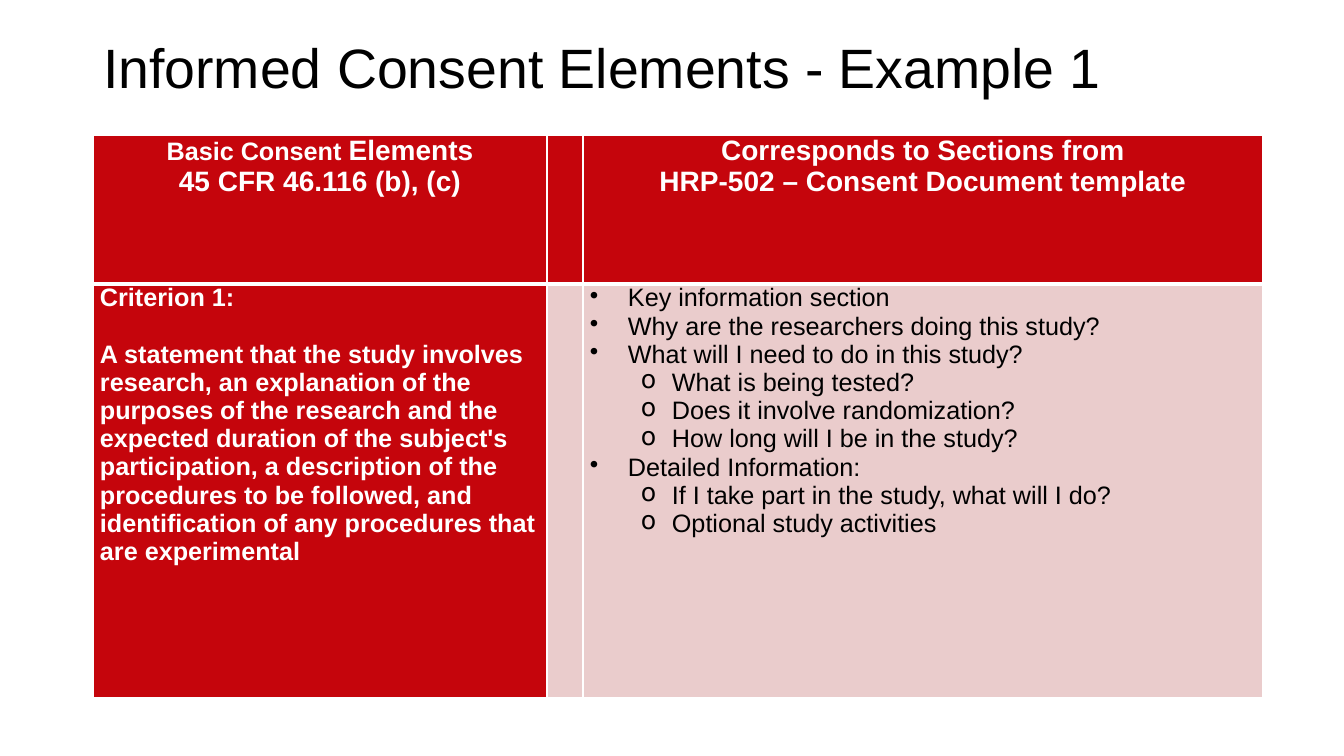
from lxml import etree
from pptx import Presentation
from pptx.dml.color import RGBColor
from pptx.enum.text import MSO_ANCHOR, MSO_AUTO_SIZE, PP_ALIGN
from pptx.oxml.ns import qn
from pptx.util import Pt

LEFT, CENTER = PP_ALIGN.LEFT, PP_ALIGN.CENTER
MIDDLE, TOP = MSO_ANCHOR.MIDDLE, MSO_ANCHOR.TOP
NO_AUTOFIT = MSO_AUTO_SIZE.NONE
RED = RGBColor(0xC5, 0x05, 0x0C)
PINK = RGBColor(0xEA, 0xCC, 0xCC)
WHITE = RGBColor(0xFF, 0xFF, 0xFF)
BLACK = RGBColor(0x00, 0x00, 0x00)
EMU_PER_PX = 914400 / 100.8


def px(length):
    return round(length * EMU_PER_PX)


def add_run(paragraph, text, size, color, bold):
    run = paragraph.add_run()
    run.text = text
    run.font.name = "Arial"
    run.font.size = Pt(size)
    run.font.color.rgb = color
    run.font.bold = bold


prs = Presentation()
prs.slide_width, prs.slide_height = px(1344), px(756)
slide = prs.slides.add_slide(prs.slide_layouts[5])

# Title
title = slide.shapes.title
title.left, title.top, title.width, title.height = px(93), px(35), px(1159), px(71)
title_frame = title.text_frame
title_frame.auto_size = NO_AUTOFIT
title_frame.vertical_anchor = MIDDLE
heading = title_frame.paragraphs[0]
heading.alignment = LEFT
heading.line_spacing = 0.9
add_run(heading, "Informed Consent Elements - Example 1", 39.6, BLACK, False)

# Table grid
column_widths = [454, 36, 680]
row_heights = [149, 414]
table = slide.shapes.add_table(
    len(row_heights), len(column_widths), px(93), px(135),
    px(sum(column_widths)), px(sum(row_heights))).table
for column, width in zip(table.columns, column_widths):
    column.width = px(width)
for row, height in zip(table.rows, row_heights):
    row.height = px(height)

# Cell fills, margins and borders
fills = [[RED, RED, RED], [RED, PINK, PINK]]
for r, row_fills in enumerate(fills):
    for c, fill_color in enumerate(row_fills):
        cell = table.cell(r, c)
        cell.margin_left = cell.margin_right = px(7)
        cell.margin_top = cell.margin_bottom = 0
        cell.vertical_anchor = TOP
        cell.fill.solid()
        cell.fill.fore_color.rgb = fill_color
        properties = cell._tc.get_or_add_tcPr()
        for position, side in enumerate(["lnL", "lnR", "lnT", "lnB"]):
            on_header_rule = (r, side) in [(0, "lnB"), (1, "lnT")]
            border = etree.Element(qn("a:" + side), w=str(Pt(3 if on_header_rule else 1)))
            solid = etree.SubElement(border, qn("a:solidFill"))
            etree.SubElement(solid, qn("a:srgbClr"), val=str(WHITE))
            properties.insert(position, border)

# Header row: lines made of (text, size) runs
headers = {
    0: [[("Basic Consent ", 18), ("Elements", 20)],
        [("45 CFR 46.116 (b), (c)", 20)]],
    2: [[("Corresponds to Sections from", 20)],
        [("HRP-502 – Consent Document template", 20)]],
}
for c, lines in headers.items():
    frame = table.cell(0, c).text_frame
    for i, line in enumerate(lines):
        paragraph = frame.add_paragraph() if i else frame.paragraphs[0]
        paragraph.alignment = CENTER
        for text, size in line:
            add_run(paragraph, text, size, WHITE, True)

# Criterion
criterion_frame = table.cell(1, 0).text_frame
add_run(criterion_frame.paragraphs[0], "Criterion 1:", 18, WHITE, True)
statement = criterion_frame.add_paragraph()
statement.space_before = Pt(20)
add_run(statement,
        "A statement that the study involves research, an explanation of the purposes "
        "of the research and the expected duration of the subject's participation, "
        "a description of the procedures to be followed, and identification of any "
        "procedures that are experimental", 18, WHITE, True)

# Matching template sections: (level, text)
sections = [
    (0, "Key information section"),
    (0, "Why are the researchers doing this study?"),
    (0, "What will I need to do in this study?"),
    (1, "What is being tested?"),
    (1, "Does it involve randomization?"),
    (1, "How long will I be in the study?"),
    (0, "Detailed Information:"),
    (1, "If I take part in the study, what will I do?"),
    (1, "Optional study activities"),
]
bullet_styles = [("•", 38, 38), ("o", 82, 31)]  # mark, left margin, hanging
sections_frame = table.cell(1, 2).text_frame
for i, (level, text) in enumerate(sections):
    paragraph = sections_frame.add_paragraph() if i else sections_frame.paragraphs[0]
    paragraph.level = level
    mark, margin, hanging = bullet_styles[level]
    paragraph_properties = paragraph._p.get_or_add_pPr()
    paragraph_properties.set("marL", str(px(margin)))
    paragraph_properties.set("indent", str(-px(hanging)))
    etree.SubElement(paragraph_properties, qn("a:buChar"), char=mark)
    add_run(paragraph, text, 18, BLACK, False)

prs.save("out.pptx")
